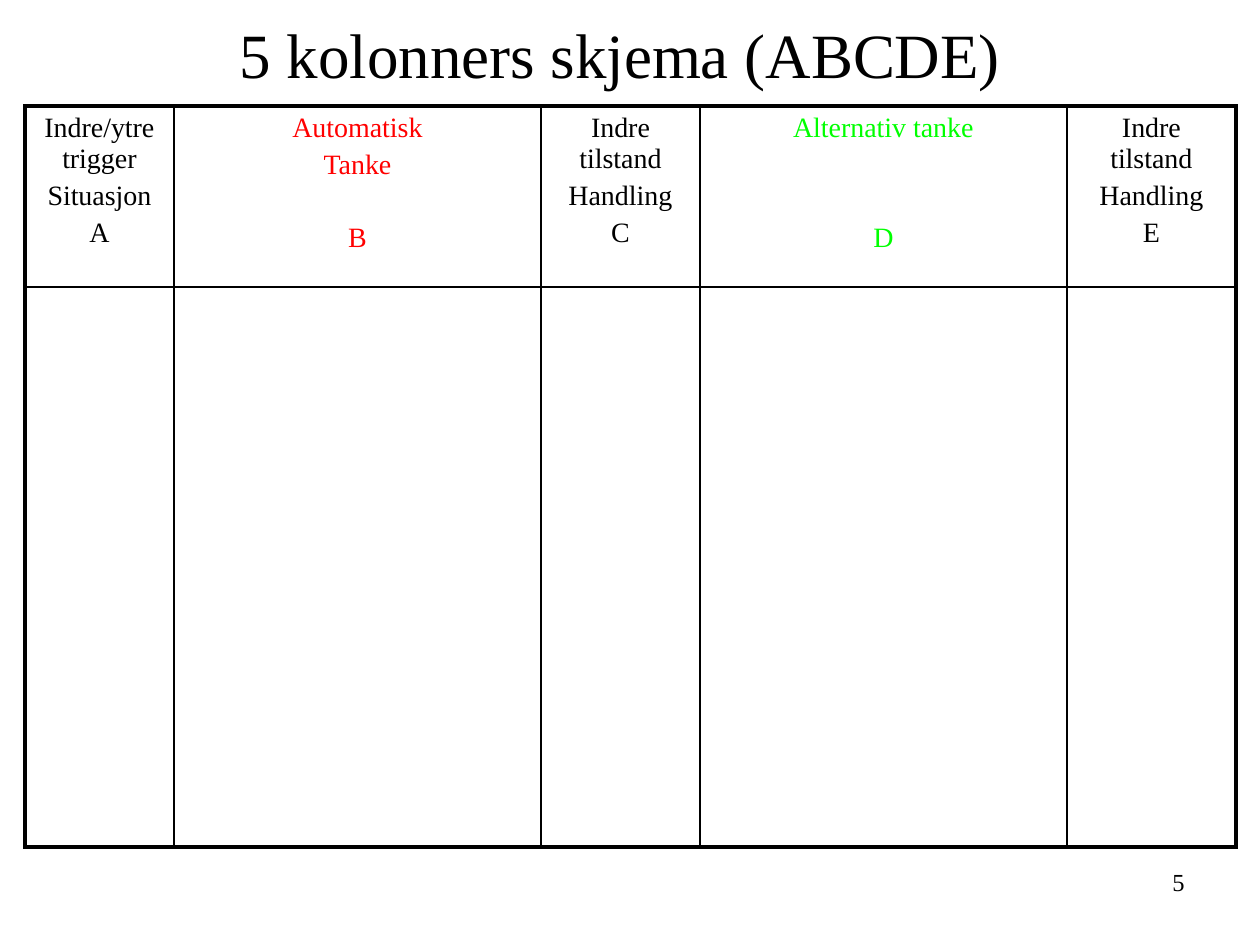
"""Build the five-column ABCDE form slide."""
from lxml.etree import SubElement
from pptx import Presentation
from pptx.dml.color import RGBColor
from pptx.enum.text import PP_ALIGN
from pptx.oxml.ns import qn
from pptx.util import Pt

SCALE = 914400 / 126
FONT = "Times New Roman"
BLACK = RGBColor(0, 0, 0)
RED = RGBColor(255, 0, 0)
GREEN = RGBColor(0, 255, 0)
THIN, THICK = 1, 2.25

TITLE = "5 kolonners skjema (ABCDE)"
NUMBER = "5"
GAP = 3.4
HEADS = [
    (149, BLACK, ["Indre/ytre trigger", "Situasjon", "A"], GAP),
    (367, RED, ["Automatisk", "Tanke", "B"], 24),
    (159, BLACK, ["Indre tilstand", "Handling", "C"], GAP),
    (367, GREEN, ["Alternativ tanke", "D"], 45),
    (169, BLACK, ["Indre tilstand", "Handling", "E"], GAP),
]
ROWS = [181, 560]


def px(size):
    return round(size * SCALE)


def style(frame, size, color, align):
    for par in frame.paragraphs:
        par.alignment = align
        for run in par.runs:
            run.font.name = FONT
            run.font.size = Pt(size)
            run.font.color.rgb = color


def add_text(slide, text, box, size, align, top=6):
    frame = slide.shapes.add_textbox(*map(px, box)).text_frame
    frame.word_wrap = True
    frame.margin_top = px(top)
    frame.margin_bottom = 0
    frame.text = text
    style(frame, size, BLACK, align)


def add_edges(cell, edges):
    props = cell._tc.get_or_add_tcPr()
    for side, width in edges.items():
        line = SubElement(props, qn(f"a:ln{side}"), w=str(Pt(width)))
        fill = SubElement(line, qn("a:solidFill"))
        SubElement(fill, qn("a:srgbClr"), val=str(BLACK))
    cell.fill.background()


def add_form(slide):
    wide = sum(head[0] for head in HEADS)
    box = map(px, (25, 106, wide, sum(ROWS)))
    table = slide.shapes.add_table(len(ROWS), len(HEADS), *box).table
    table.first_row = table.horz_banding = False
    for row, high in zip(table.rows, ROWS):
        row.height = px(high)
    for col, (width, color, lines, gap) in enumerate(HEADS):
        table.columns[col].width = px(width)
        frame = table.cell(0, col).text_frame
        frame.text = "\n".join(lines)
        style(frame, 16, color, PP_ALIGN.CENTER)
        for par in frame.paragraphs:
            par.space_before = Pt(GAP)
        frame.paragraphs[-1].space_before = Pt(gap)
        for row in range(len(ROWS)):
            outer = {
                "L": col == 0,
                "R": col == len(HEADS) - 1,
                "T": row == 0,
                "B": row == len(ROWS) - 1,
            }
            edges = {side: THICK if out else THIN for side, out in outer.items()}
            add_edges(table.cell(row, col), edges)


def main():
    deck = Presentation()
    deck.slide_width, deck.slide_height = px(1260), px(945)
    slide = deck.slides.add_slide(deck.slide_layouts[6])
    add_text(slide, NUMBER, (903, 861, 294, 66), 14, PP_ALIGN.RIGHT)
    add_form(slide)
    add_text(slide, TITLE, (223, 1, 794, 88), 36, PP_ALIGN.CENTER, 15)
    deck.save("out.pptx")


if __name__ == "__main__":
    main()
